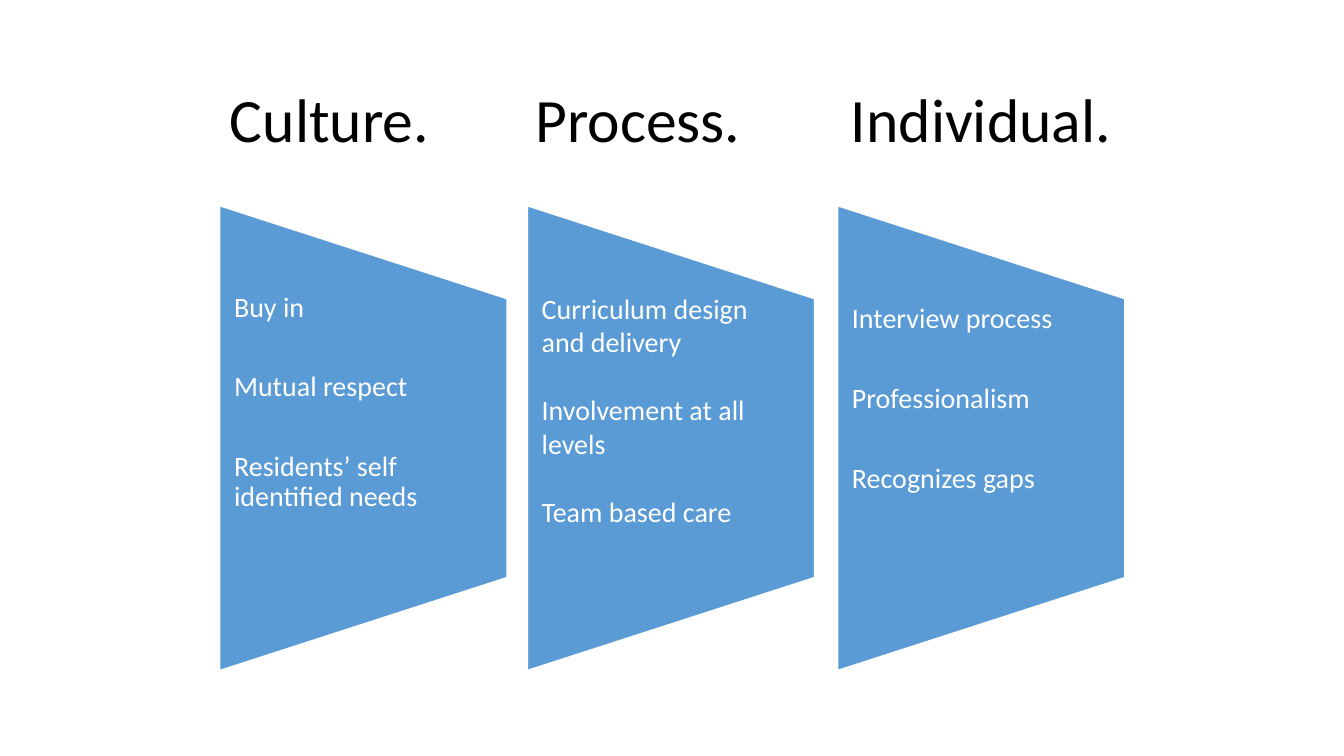
from lxml import etree
from pptx import Presentation
from pptx.dml.color import RGBColor
from pptx.enum.shapes import MSO_SHAPE
from pptx.enum.text import MSO_ANCHOR, MSO_AUTO_SIZE, PP_ALIGN
from pptx.oxml.ns import qn
from pptx.util import Cm, Pt

PANEL = MSO_SHAPE.FLOWCHART_MANUAL_OPERATION
TOP, MIDDLE = MSO_ANCHOR.TOP, MSO_ANCHOR.MIDDLE
LEFT = PP_ALIGN.LEFT
NO_FIT = MSO_AUTO_SIZE.NONE

COLORS = {"panel": "5B9BD5", "white": "FFFFFF", "black": "000000"}
WIDE, TALL, MID = 7.24, 11.71, 11.04  # panel width, height, centre line
HEADS = ["Culture.", "Process.", "Individual."]
TABS = [7.7, 15.65]

# Each column: left, text top, line spacing, gap, groups of lines
COLUMNS = [
    (5.54, 7.38, 0.9, 35.2, [
        ["Buy in"], ["Mutual respect"],
        ["Residents’ self identified needs"]]),
    (13.29, 7.34, 1.0, 24.4, [
        ["Curriculum design", "and delivery"],
        ["Involvement at all levels"], ["Team based care"]]),
    (21.11, 7.68, 0.9, 35.2, [
        ["Interview process"], ["Professionalism"], ["Recognizes gaps"]]),
]


class Deck:
    """Holds the style and the current slide."""

    def __init__(self):
        self.prs = Presentation()
        self.prs.slide_width, self.prs.slide_height = Cm(33.87), Cm(19.05)
        self.slide = self.prs.slides.add_slide(self.prs.slide_layouts[5])
        self.font = "Calibri"

    def color(self, name):
        return RGBColor.from_string(COLORS[name])

    def run(self, para, text, size, color):
        run = para.add_run()
        run.text = text
        run.font.name, run.font.size = self.font, Pt(size)
        run.font.color.rgb = self.color(color)

    def title(self, heads, tabs):
        box = self.slide.shapes.title
        box.left, box.top = Cm(5.54), Cm(1.5)
        box.width, box.height = Cm(28.3), Cm(3.18)
        frame = box.text_frame
        frame.auto_size, frame.vertical_anchor = NO_FIT, MIDDLE
        para = frame.paragraphs[0]
        para.alignment, para.line_spacing = LEFT, 0.9
        # Tab stops line the heads up with the panels
        stops = etree.SubElement(para._p.get_or_add_pPr(), qn("a:tabLst"))
        for tab in tabs:
            etree.SubElement(stops, qn("a:tab"), pos=str(Cm(tab)), algn="l")
        for i, head in enumerate(heads):
            self.run(para, "\t" + head if i else head, 44, "black")

    def panel(self, left):
        # Turned a quarter left, so the box is set around its centre
        shape = self.slide.shapes.add_shape(
            PANEL, Cm(left + (WIDE - TALL) / 2), Cm(MID - WIDE / 2),
            Cm(TALL), Cm(WIDE))
        shape.rotation = 270
        shape.shadow.inherit = False
        shape.fill.solid()
        shape.fill.fore_color.rgb = self.color("panel")
        shape.line.color.rgb = self.color("white")
        shape.line.width = Pt(1)

    def points(self, left, top, spacing, gap, groups):
        box = self.slide.shapes.add_textbox(
            Cm(left), Cm(top), Cm(WIDE), Cm(7.04))
        frame = box.text_frame
        frame.word_wrap, frame.vertical_anchor = True, TOP
        frame.margin_left = frame.margin_right = Cm(0.36)
        frame.margin_top = frame.margin_bottom = 0
        para = frame.paragraphs[0]
        for g, lines in enumerate(groups):
            for n, line in enumerate(lines):
                if g or n:
                    para = frame.add_paragraph()
                para.alignment, para.line_spacing = LEFT, spacing
                para.space_before = Pt(gap if g and not n else 0)
                self.run(para, line, 20, "white")


def main():
    deck = Deck()
    # Heads
    deck.title(HEADS, TABS)
    # Columns
    for left, *text in COLUMNS:
        deck.panel(left)
        deck.points(left, *text)
    deck.prs.save("out.pptx")


if __name__ == "__main__":
    main()
